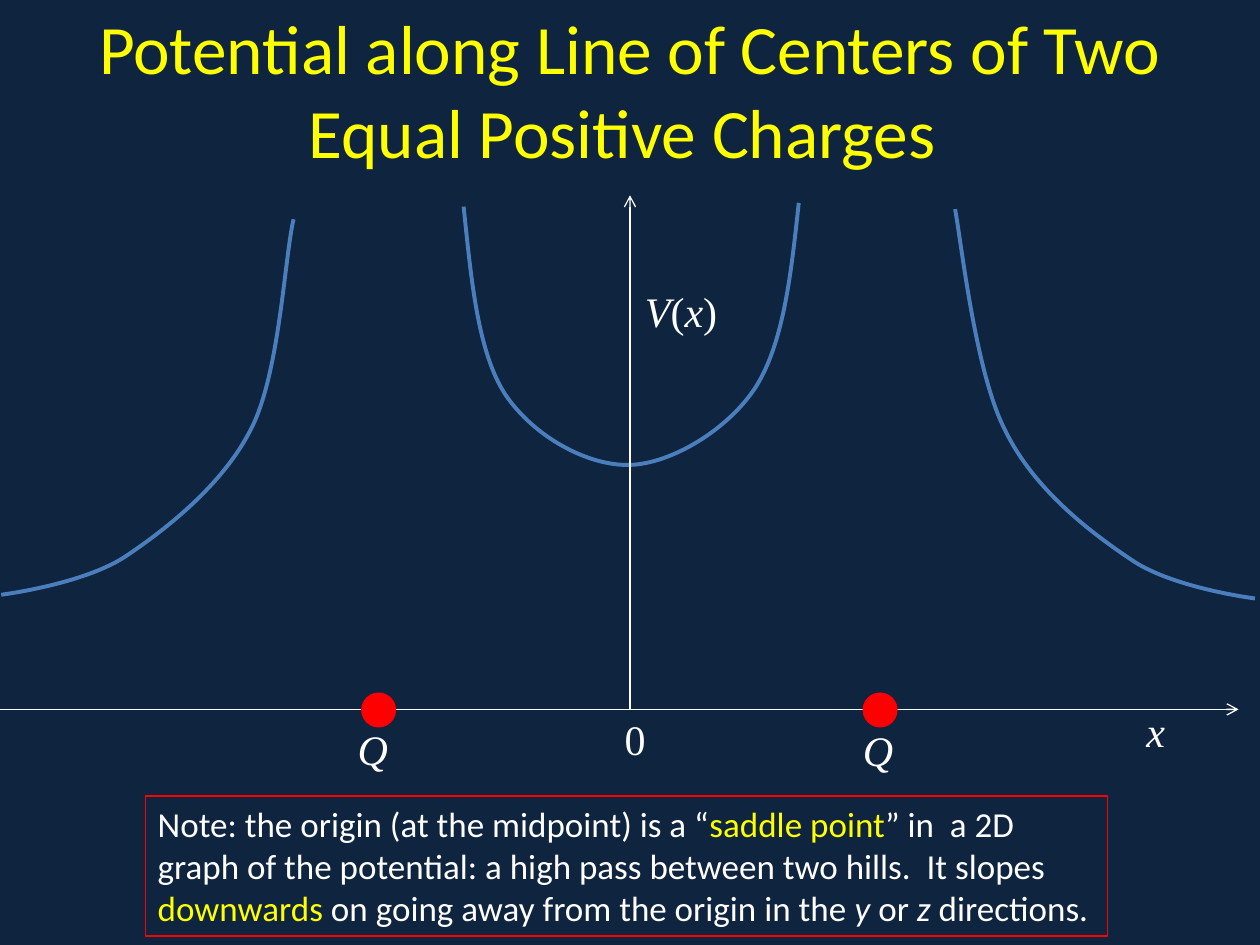
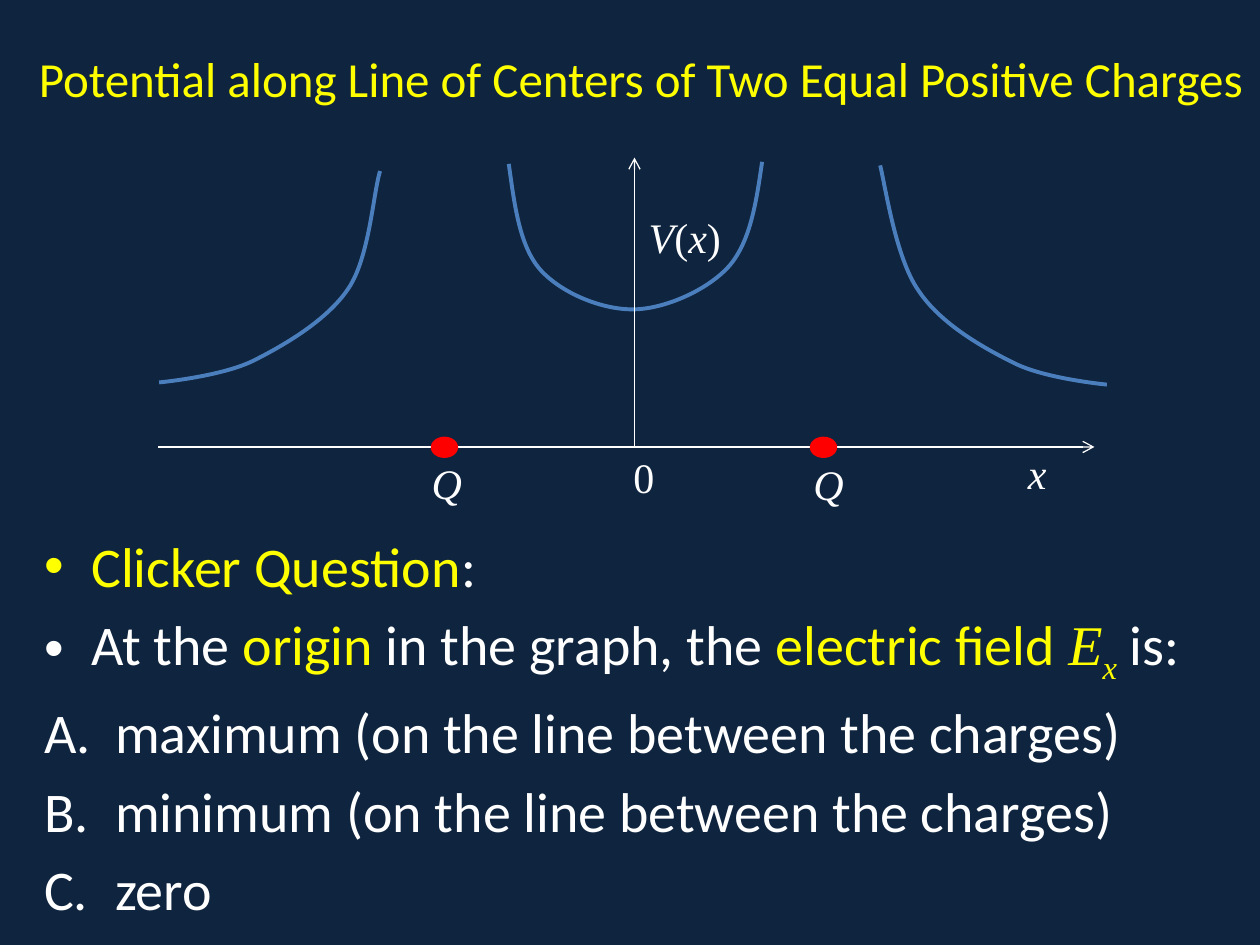
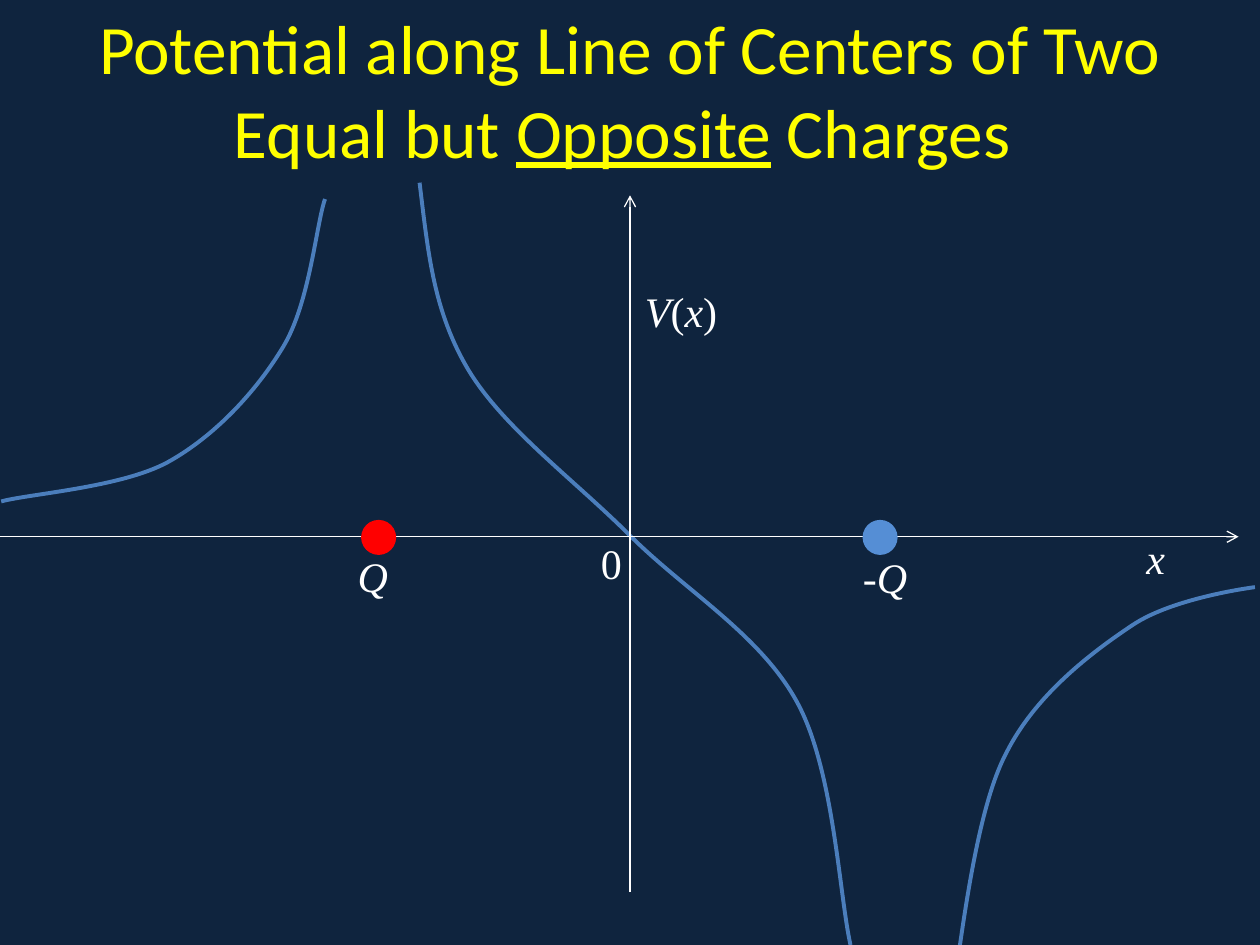
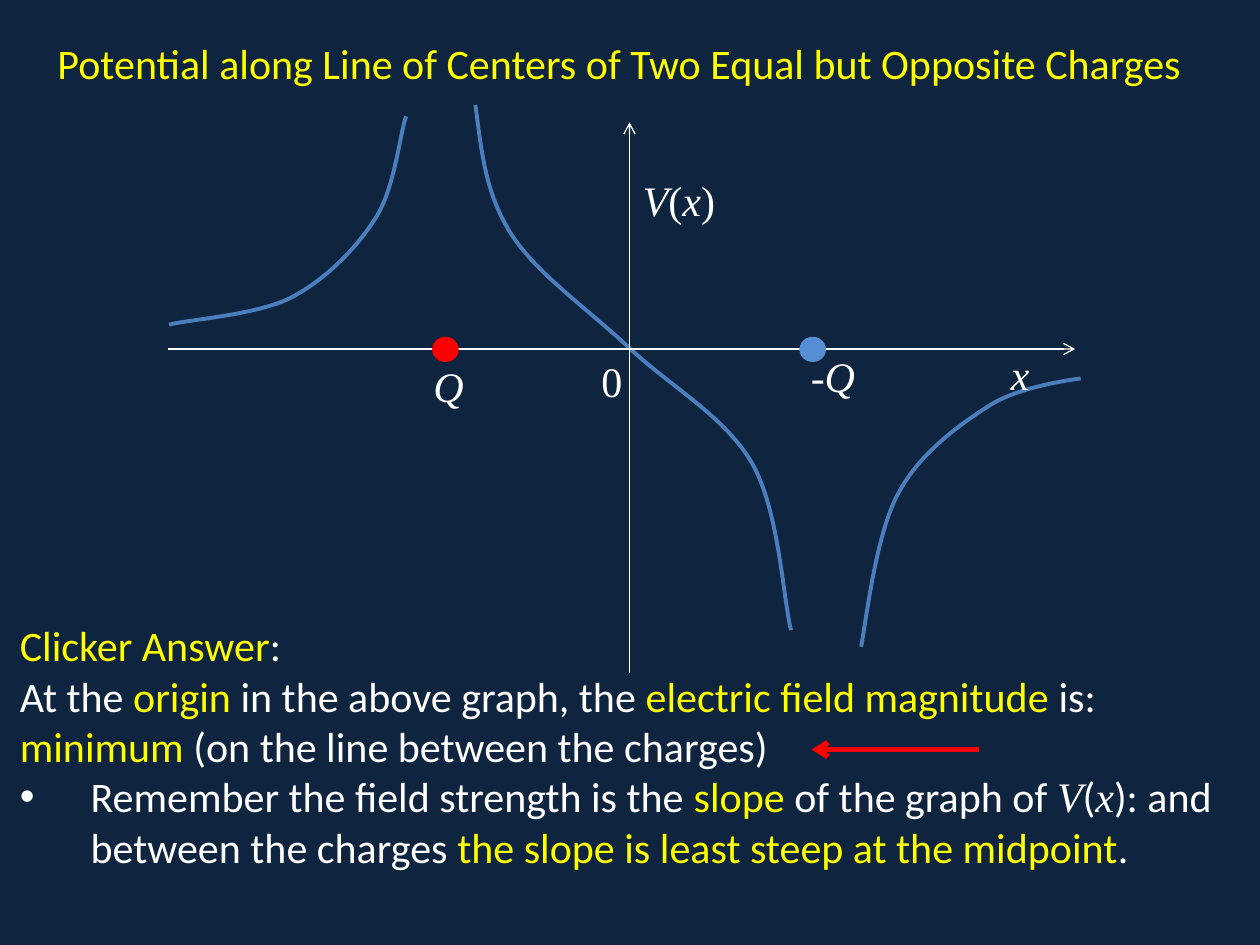
"""Builds four slides on the potential along the line of centers of two charges."""
from lxml.etree import SubElement
from pptx import Presentation
from pptx.dml.color import RGBColor
from pptx.enum.shapes import MSO_CONNECTOR as CONNECTOR, MSO_SHAPE as SHAPE
from pptx.enum.text import MSO_ANCHOR as ANCHOR, MSO_AUTO_SIZE as AUTO_SIZE, PP_ALIGN as ALIGN
from pptx.oxml.ns import qn
from pptx.util import Cm, Pt

NAVY = RGBColor(0x0F, 0x24, 0x3E)
YELLOW = RGBColor(0xFF, 0xFF, 0x00)
WHITE = RGBColor(0xFF, 0xFF, 0xFF)
RED = RGBColor(0xFF, 0x00, 0x00)
LIGHT_BLUE = RGBColor(0x55, 0x8E, 0xD5)
CURVE_BLUE = RGBColor(0x4B, 0x7E, 0xBC)
SANS, SERIF = "Calibri", "Times New Roman"

HIGHLIGHT, ITALIC, MATH, UNDERLINE, SUBSCRIPT = "yimus"
V_OF_X = [("V", "mi"), ("(", "m"), ("x", "mi"), (")", "m")]

TITLES = [
    ([("Potential along Line of Centers of Two Equal Positive Charges ", "y")],
     (1.27, 0.2, 22.86, 3.18), 39.6),
    ([("Potential along Line of Centers of Two Equal Positive Charges ", "y")],
     (0.43, 0.2, 24.97, 2.74), 28),
    ([("Potential along Line of Centers of Two Equal but ", "y"), ("Opposite", "yu"),
      (" Charges ", "y")], (1.27, 0.2, 22.86, 3.18), 39.6),
    ([("Potential along Line of Centers of Two Equal but Opposite Charges ", "y")],
     (0.84, 0.2, 23.29, 2.11), 24),
]

NOTE = [([
    ("Note: the origin (at the midpoint) is a “", ""), ("saddle point", "y"),
    ("” in  a 2D graph of the potential: a high pass between two hills.  It slopes ", ""),
    ("downwards", "y"), (" on going away from the origin in the ", ""), ("y", "i"),
    (" or ", ""), ("z", "i"), (" directions.", "")], None, 0)]

QUESTION = [
    ([("Clicker Question", "y"), (":", "")], "•", 0.95),
    ([("At the ", ""), ("origin", "y"), (" in the graph, the ", ""), ("electric field ", "y"),
      ("E", "ymi"), ("x", "ymis"), (" is:", "")], "•", 0.95),
    ([("maximum (on the line between the charges)", "")], "A.", 1.43),
    ([("minimum (on the line between the charges)", "")], "A.", 1.43),
    ([("zero", "")], "A.", 1.43),
]

ANSWER = [
    ([("Clicker Answer", "y"), (":", "")], None, 0),
    ([("At the ", ""), ("origin", "y"), (" in the above graph, the ", ""),
      ("electric field magnitude", "y"), (" is:", "")], None, 0),
    ([("minimum", "y"), (" (on the line between the charges)", "")], None, 1.43),
    ([("Remember the field strength is the ", ""), ("slope", "y"), (" of the graph of ", ""),
      ("V", "mi"), ("(", ""), ("x", "mi"), ("): and between the charges ", ""),
      ("the slope is least steep at the midpoint", "y"), (".", "")], "•", 1.43),
]

EQUAL_CHARGES = {
    "axis": 5.63, "bottom": 5.63, "zero": (4.86, -0.02),
    "second": ([("Q", "mi")], RED, 0.5),
    "left": [(2.33, 1.74), (2.26, 2.03), (2.22, 2.95), (2, 3.39), (1.78, 3.84),
             (1.32, 4.2), (0.99, 4.42), (0.65, 4.64), (0.01, 4.72), (0.01, 4.72)],
    "middle": [(3.68, 1.64), (3.74, 2.21), (3.79, 2.79), (4.01, 3.13), (4.24, 3.47),
               (4.67, 3.7), (5, 3.69), (5.33, 3.68), (5.78, 3.41), (6, 3.07),
               (6.22, 2.72), (6.28, 2.17), (6.34, 1.61)],
    "right": [(7.58, 1.66), (7.63, 1.92), (7.74, 2.96), (7.98, 3.42), (8.21, 3.89),
              (8.66, 4.23), (8.99, 4.45), (9.32, 4.67), (9.96, 4.75), (9.96, 4.75)],
}
OPPOSITE_CHARGES = {
    "axis": 4.26, "bottom": 7.08, "zero": (4.67, -0.04),
    "second": ([("-Q", "mi")], LIGHT_BLUE, 0.58),
    "left": [(2.58, 1.58), (2.51, 1.78), (2.46, 2.4), (2.25, 2.75), (2.04, 3.1),
             (1.71, 3.46), (1.33, 3.67), (0.96, 3.87), (0.23, 3.92), (0.01, 3.98)],
    "middle": [(3.33, 1.45), (3.4, 2.02), (3.44, 2.47), (3.72, 2.94), (4, 3.4),
               (4.56, 3.81), (5, 4.25), (5.44, 4.69), (6.04, 5.04), (6.33, 5.58),
               (6.62, 6.12), (6.66, 7.1), (6.75, 7.5)],
    "right": [(7.58, 7.75), (7.63, 7.48), (7.74, 6.45), (7.98, 5.99), (8.21, 5.52),
              (8.66, 5.18), (8.99, 4.96), (9.32, 4.74), (9.96, 4.66), (9.96, 4.66)],
}
SMALL_OPPOSITE_CHARGES = {
    **OPPOSITE_CHARGES, "bottom": 7.99, "top": 1.65,
    "right": [(x - 0.07, y - 0.06) for x, y in OPPOSITE_CHARGES["right"]],
    "moved": {"V": (5.01, 2.18, 1.47), "0": (4.56, 4.26, 0.5), "second": (6.83, 4.21, 1.15)},
}

FULL_SIZE = (0, 0, 2.54, 2.54)
GRAPHS = [
    (EQUAL_CHARGES, FULL_SIZE),
    (EQUAL_CHARGES, (3.19, 0.96, 1.92, 1.43)),
    (OPPOSITE_CHARGES, FULL_SIZE),
    (SMALL_OPPOSITE_CHARGES, (3.39, -0.42, 1.86, 1.75)),
]


def add_bullet(paragraph, bullet, indent):
    properties = paragraph._p.get_or_add_pPr()
    properties.set("marL", str(Cm(indent)))
    properties.set("indent", str(-Cm(indent)))
    if bullet == "A.":
        SubElement(properties, qn("a:buAutoNum"), type="alphaUcPeriod")
    elif bullet:
        SubElement(properties, qn("a:buFont"), typeface="Arial")
        SubElement(properties, qn("a:buChar"), char=bullet)


def add_text(slide, paragraphs, box, size=24, align=ALIGN.LEFT, anchor=ANCHOR.TOP,
             space_before=0, outline=None, grow=False):
    shape = slide.shapes.add_textbox(*map(Cm, box))
    if outline:
        shape.line.color.rgb = outline
        shape.line.width = Pt(0.75)
    frame = shape.text_frame
    frame.word_wrap = True
    frame.vertical_anchor = anchor
    frame.auto_size = AUTO_SIZE.SHAPE_TO_FIT_TEXT if grow else AUTO_SIZE.NONE
    for index, (runs, bullet, indent) in enumerate(paragraphs):
        paragraph = frame.add_paragraph() if index else frame.paragraphs[0]
        paragraph.alignment = align
        paragraph.space_before = Pt(space_before)
        add_bullet(paragraph, bullet, indent)
        for text, flags in runs:
            run = paragraph.add_run()
            run.text = text
            font = run.font
            font.size = Pt(size)
            font.name = SERIF if MATH in flags else SANS
            font.color.rgb = YELLOW if HIGHLIGHT in flags else WHITE
            font.italic = ITALIC in flags
            font.underline = UNDERLINE in flags
            if SUBSCRIPT in flags:
                font._element.set("baseline", "-25000")


def add_arrow(slide, start, end, color=WHITE, width=0.75):
    arrow = slide.shapes.add_connector(CONNECTOR.STRAIGHT, *map(Cm, (*start, *end)))
    arrow.line.color.rgb = color
    arrow.line.width = Pt(width)
    SubElement(arrow.line._get_or_add_ln(), qn("a:tailEnd"), type="arrow")
    SubElement(arrow._element.spPr, qn("a:effectLst"))


def add_curve(slide, points):
    start, *rest = [(Cm(x), Cm(y)) for x, y in points]
    builder = slide.shapes.build_freeform(*start)
    builder.add_line_segments(rest, close=False)
    curve = builder.convert_to_shape()
    curve.shadow.inherit = False
    curve.fill.background()
    curve.line.color.rgb = CURVE_BLUE
    curve.line.width = Pt(2.25)
    segments = list(curve._element.iter(qn("a:lnTo")))
    outline = segments[0].getparent()
    for index in range(0, len(segments), 3):
        bezier = SubElement(outline, qn("a:cubicBezTo"))
        for segment in segments[index:index + 3]:
            bezier.append(segment[0])
            outline.remove(segment)


def add_charge(slide, box, color):
    charge = slide.shapes.add_shape(SHAPE.OVAL, *map(Cm, box))
    charge.shadow.inherit = False
    charge.fill.solid()
    charge.fill.fore_color.rgb = color
    charge.line.color.rgb = color
    charge.line.width = Pt(2)


def add_graph(slide, graph, placement):
    left, top, unit_x, unit_y = placement

    def place(x, y):
        return left + x * unit_x, top + y * unit_y

    def place_box(x, y, width, height):
        return *place(x, y), width * unit_x, height * unit_y

    axis = graph["axis"]
    second_runs, second_color, second_width = graph["second"]
    zero_x, zero_offset = graph["zero"]
    for branch in ("left", "middle", "right"):
        add_curve(slide, [place(*point) for point in graph[branch]])
    add_arrow(slide, place(0, axis), place(9.83, axis))
    add_arrow(slide, place(5, graph["bottom"]), place(5, graph.get("top", 1.55)))
    for x, color in ((2.88, RED), (6.86, second_color)):
        add_charge(slide, place_box(x, axis - 0.12, 0.25, 0.25), color)
    labels = {
        "V": (V_OF_X, 5.02, 2.22, 1.08),
        "x": ([("x", "mi")], 9, axis - 0.08, 0.5),
        "0": ([("0", "m")], zero_x, axis + zero_offset, 0.5),
        "first": ([("Q", "mi")], 2.74, axis + 0.06, 0.5),
        "second": (second_runs, 6.75, axis + 0.07, second_width),
    }
    for name, (runs, *position) in labels.items():
        x, y, width = graph.get("moved", {}).get(name, position)
        add_text(slide, [(runs, None, 0)], place_box(x, y, width, 0.5), grow=True)


def main():
    presentation = Presentation()
    presentation.slide_width, presentation.slide_height = Cm(25.4), Cm(19.05)
    slides = []
    for (title, box, size), (graph, placement) in zip(TITLES, GRAPHS):
        slide = presentation.slides.add_slide(presentation.slide_layouts[6])
        slide.background.fill.solid()
        slide.background.fill.fore_color.rgb = NAVY
        add_text(slide, [(title, None, 0)], box, size=size, align=ALIGN.CENTER,
                 anchor=ANCHOR.MIDDLE)
        add_graph(slide, graph, placement)
        slides.append(slide)
    add_text(slides[0], NOTE, (2.93, 16.05, 19.4, 2.82), size=20, outline=RED, grow=True)
    add_text(slides[1], QUESTION, (0.64, 10.59, 24.33, 7.82), size=32, space_before=6.4)
    add_text(slides[3], ANSWER, (0.15, 12.37, 24.97, 6.58))
    add_arrow(slides[3], (19.74, 15.11), (16.36, 15.11), color=RED, width=3)
    presentation.save("out.pptx")


if __name__ == "__main__":
    main()
